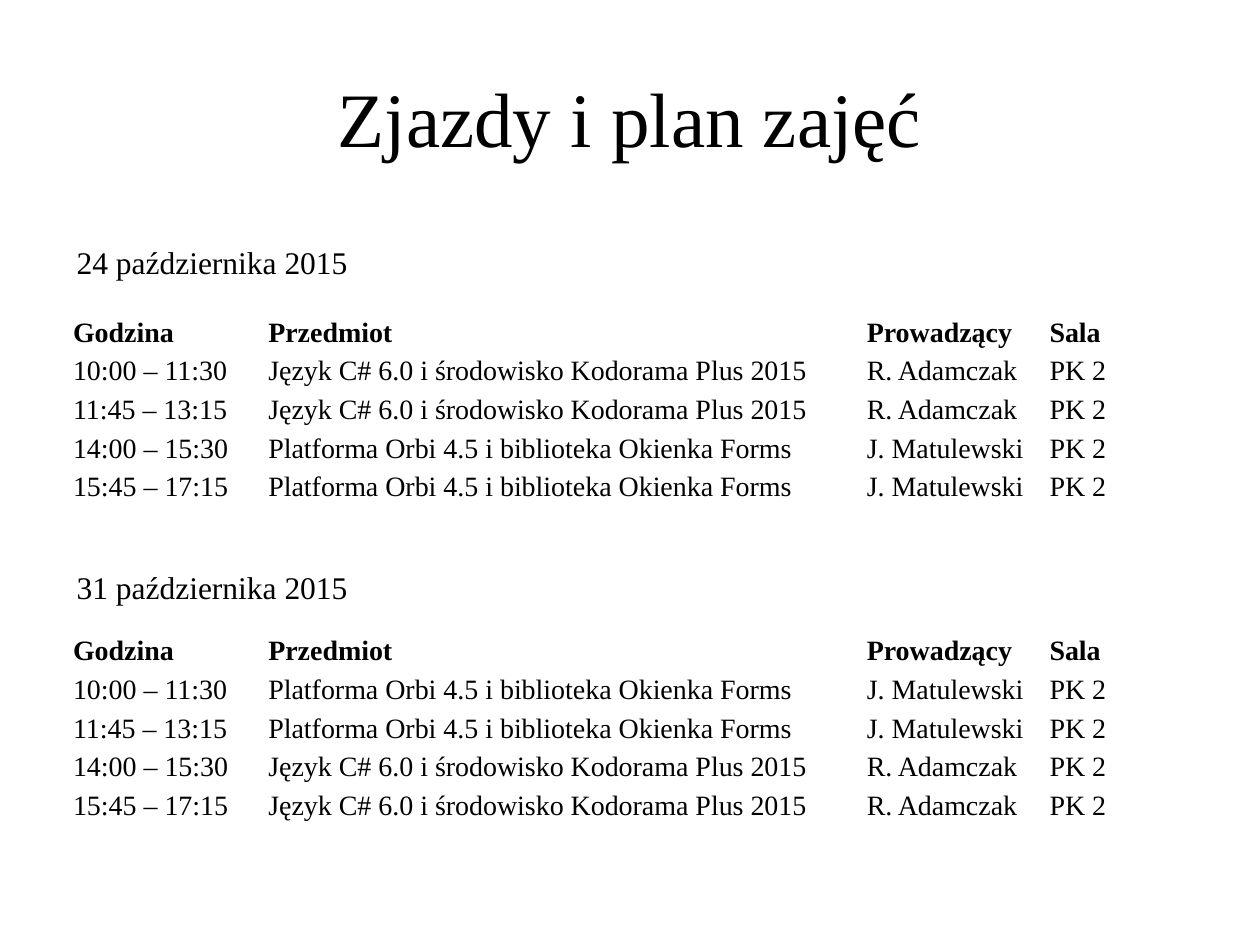
"""Build a slide with the class timetables of two meeting days."""
from lxml import etree
from pptx import Presentation
from pptx.dml.color import RGBColor
from pptx.enum.text import MSO_ANCHOR, PP_ALIGN
from pptx.oxml.ns import qn
from pptx.util import Inches, Pt

CENTER = PP_ALIGN.CENTER
MIDDLE = MSO_ANCHOR.MIDDLE
BLACK = RGBColor(0, 0, 0)
WHITE = RGBColor(255, 255, 255)
FONT = "Times New Roman"

TITLE = "Zjazdy i plan zajęć"
HEADER = ("Godzina", "Przedmiot", "Prowadzący", "Sala")
HOURS = ("10:00 – 11:30", "11:45 – 13:15", "14:00 – 15:30", "15:45 – 17:15")
LANGUAGE = ("Język C# 6.0 i środowisko Kodorama Plus 2015", "R. Adamczak", "PK 2")
PLATFORM = ("Platforma Orbi 4.5 i biblioteka Okienka Forms", "J. Matulewski", "PK 2")
DAYS = [
    {"date": "24 października 2015", "classes": (LANGUAGE, LANGUAGE, PLATFORM, PLATFORM),
     "date_top": 1.88, "table_top": 2.48},
    {"date": "31 października 2015", "classes": (PLATFORM, PLATFORM, LANGUAGE, LANGUAGE),
     "date_top": 4.46, "table_top": 5.01},
]

SLIDE_WIDTH, SLIDE_HEIGHT = 10, 7.5
LEFT = 0.51
COLUMNS = (1.55, 4.75, 1.45, 0.82)
ROW_HEIGHT = 0.28
CELL_FORMAT = {"margin_left": Inches(0.07), "margin_right": Inches(0.07),
               "margin_top": 0, "margin_bottom": 0}
TABLE_FLAGS = {"first_row": False, "horz_banding": False}


def set_all(target, values):
    for name, value in values.items():
        setattr(target, name, value)


def write(paragraph, text, size, bold=False):
    run = paragraph.add_run()
    run.text = text
    set_all(run.font, {"name": FONT, "size": Pt(size), "bold": bold})
    run.font.color.rgb = BLACK


def add_text(slide, text, box, size, wrap, alignment=None, anchor=None):
    frame = slide.shapes.add_textbox(*map(Inches, box)).text_frame
    set_all(frame, {"word_wrap": wrap, "vertical_anchor": anchor})
    frame.paragraphs[0].alignment = alignment
    write(frame.paragraphs[0], text, size)


def add_borders(cell, row):
    properties = cell._tc.get_or_add_tcPr()
    widths = {"lnL": 1, "lnR": 1, "lnT": 3 if row == 1 else 1, "lnB": 3 if row == 0 else 1}
    for tag, width in widths.items():
        line = etree.SubElement(properties, qn(f"a:{tag}"), w=str(Pt(width)))
        fill = etree.SubElement(line, qn("a:solidFill"))
        etree.SubElement(fill, qn("a:srgbClr"), val=str(WHITE))


def add_timetable(slide, classes, top):
    rows = [HEADER] + [(hour, *lesson) for hour, lesson in zip(HOURS, classes)]
    box = (LEFT, top, sum(COLUMNS), ROW_HEIGHT * len(rows))
    table = slide.shapes.add_table(len(rows), len(COLUMNS), *map(Inches, box)).table
    set_all(table, TABLE_FLAGS)
    for column, width in zip(table.columns, COLUMNS):
        column.width = Inches(width)
    for row, texts in enumerate(rows):
        for column, text in enumerate(texts):
            cell = table.cell(row, column)
            set_all(cell, CELL_FORMAT)
            add_borders(cell, row)
            cell.fill.background()
            paragraph = cell.text_frame.paragraphs[0]
            paragraph.line_spacing = 1.15
            write(paragraph, text, 16, bold=row == 0)


def main():
    presentation = Presentation()
    set_all(presentation, {"slide_width": Inches(SLIDE_WIDTH),
                           "slide_height": Inches(SLIDE_HEIGHT)})
    slide = presentation.slides.add_slide(presentation.slide_layouts[6])
    title_box = (SLIDE_WIDTH * 0.05, SLIDE_HEIGHT * 0.04, SLIDE_WIDTH * 0.9, 1.25)
    add_text(slide, TITLE, title_box, 44, True, CENTER, MIDDLE)
    for day in DAYS:
        add_timetable(slide, day["classes"], day["table_top"])
        add_text(slide, day["date"], (LEFT, day["date_top"], 2.38, 0.4), 18, False)
    presentation.save("out.pptx")


if __name__ == "__main__":
    main()
